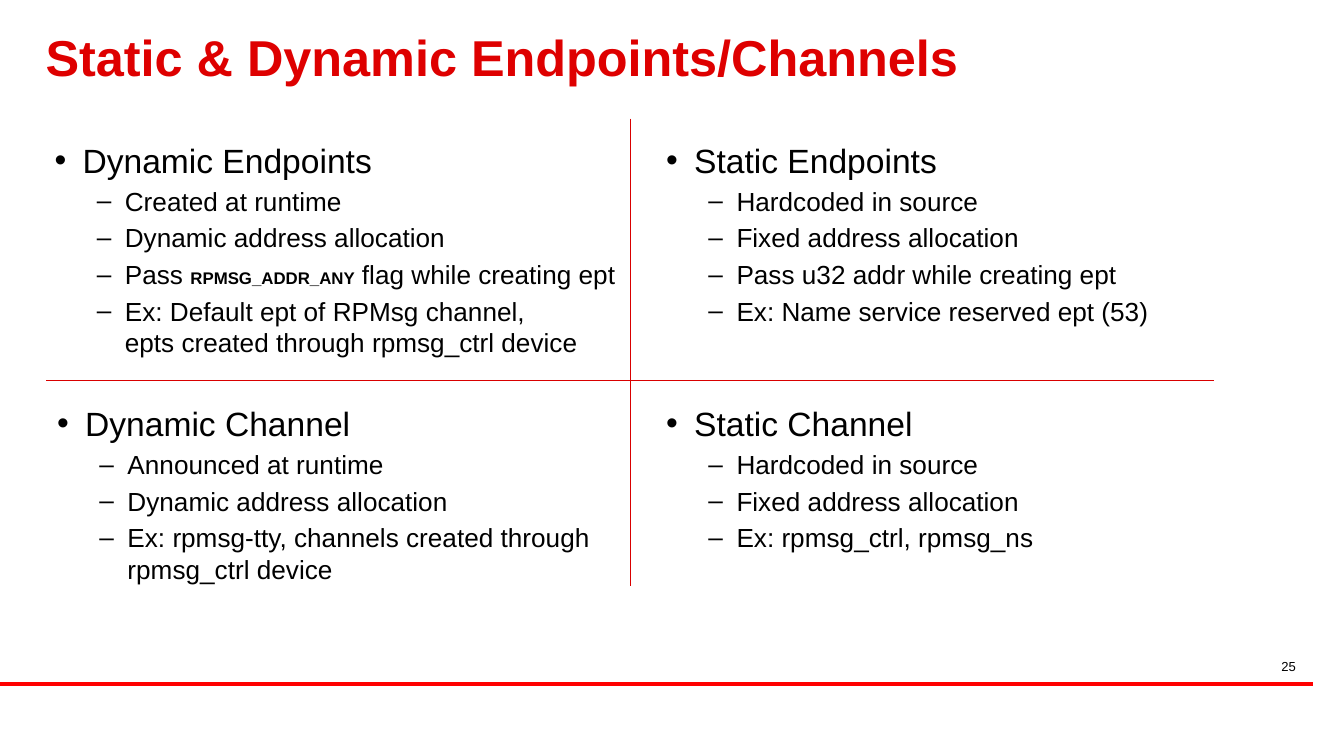
from lxml import etree
from pptx import Presentation
from pptx.dml.color import RGBColor
from pptx.enum.shapes import MSO_CONNECTOR
from pptx.enum.text import MSO_ANCHOR, MSO_AUTO_SIZE, PP_ALIGN
from pptx.oxml.ns import qn
from pptx.util import Cm, Pt

STRAIGHT = MSO_CONNECTOR.STRAIGHT
TOP, MIDDLE = MSO_ANCHOR.TOP, MSO_ANCHOR.MIDDLE
LEFT, RIGHT = PP_ALIGN.LEFT, PP_ALIGN.RIGHT
FIXED_SIZE = MSO_AUTO_SIZE.NONE

# Content: each item is one text, or a list of (text, style) pieces
TITLE = "Static & Dynamic Endpoints/Channels"
PAGE_NUMBER = "25"
QUADRANTS = [
    {"left": 0.81, "top": 2.54, "heading": "Dynamic Endpoints", "items": [
        "Created at runtime",
        "Dynamic address allocation",
        [("Pass ", "item"), ("RPMSG_ADDR_ANY", "flag"),
         (" flag while creating ept", "item")],
        "Ex: Default ept of RPMsg channel,\nepts created through rpmsg_ctrl device",
    ]},
    {"left": 12.37, "top": 2.54, "heading": "Static Endpoints", "items": [
        "Hardcoded in source",
        "Fixed address allocation",
        "Pass u32 addr while creating ept",
        "Ex: Name service reserved ept (53)",
    ]},
    {"left": 0.86, "top": 7.52, "heading": "Dynamic Channel", "items": [
        "Announced at runtime",
        "Dynamic address allocation",
        "Ex: rpmsg-tty, channels created through rpmsg_ctrl device",
    ]},
    {"left": 12.37, "top": 7.52, "heading": "Static Channel", "items": [
        "Hardcoded in source",
        "Fixed address allocation",
        "Ex: rpmsg_ctrl, rpmsg_ns",
    ]},
]
QUADRANT_SIZE = (11.56, 4.19)

# Lines: start x, start y, end x, end y, colour, width in points
LINES = [
    (0, 12.93, 24.82, 12.93, "FF0000", 2.25),
    (11.91, 2.24, 11.91, 11.07, "D90000", 0.75),
    (22.94, 7.19, 0.86, 7.19, "D90000", 0.75),
]

# Formats
STYLES = {
    "title": {"size": Pt(27), "bold": True, "color": "DE0000"},
    "heading": {"size": Pt(18), "bold": False, "color": "000000"},
    "item": {"size": Pt(14), "bold": False, "color": "000000"},
    "flag": {"size": Pt(9), "bold": True, "color": "000000"},
    "number": {"size": Pt(7), "bold": False, "color": "000000"},
}
LISTS = {
    "heading": {"level": 0, "margin": 0.53, "bullet": "•", "before": 0},
    "item": {"level": 1, "margin": 1.33, "bullet": "–", "before": 2.8},
}
HANGING = 0.53


def color(hex_string):
    return RGBColor.from_string(hex_string)


def place(shape, left, top, width, height):
    shape.left, shape.top = Cm(left), Cm(top)
    shape.width, shape.height = Cm(width), Cm(height)


def format_frame(frame, anchor=TOP):
    settings = {
        "word_wrap": True, "auto_size": FIXED_SIZE, "vertical_anchor": anchor,
        "margin_left": Cm(0.22), "margin_right": Cm(0.2),
        "margin_top": Cm(0.1), "margin_bottom": Cm(0.1),
    }
    for name, value in settings.items():
        setattr(frame, name, value)


def add_text(paragraph, text, style):
    values = STYLES[style]
    for number, line in enumerate(text.split("\n")):
        if number:
            paragraph.add_line_break()
        run = paragraph.add_run()
        run.text = line
        run.font.name = "Arial"
        run.font.size = values["size"]
        run.font.bold = values["bold"]
        run.font.color.rgb = color(values["color"])


def format_list(paragraph, kind):
    values = LISTS[kind]
    properties = paragraph._p.get_or_add_pPr()
    properties.set("marL", str(Cm(values["margin"])))
    properties.set("indent", str(-Cm(HANGING)))
    etree.SubElement(properties, qn("a:buFont")).set("typeface", "Arial")
    etree.SubElement(properties, qn("a:buChar")).set("char", values["bullet"])
    paragraph.level = values["level"]
    paragraph.alignment = LEFT
    paragraph.space_before = Pt(values["before"])


def fill_quadrant(shape, quadrant):
    place(shape, quadrant["left"], quadrant["top"], *QUADRANT_SIZE)
    frame = shape.text_frame
    format_frame(frame)
    heading = frame.paragraphs[0]
    format_list(heading, "heading")
    add_text(heading, quadrant["heading"], "heading")
    for item in quadrant["items"]:
        paragraph = frame.add_paragraph()
        format_list(paragraph, "item")
        pieces = [(item, "item")] if isinstance(item, str) else item
        for text, style in pieces:
            add_text(paragraph, text, style)


def add_line(slide, start_x, start_y, end_x, end_y, line_color, width):
    line = slide.shapes.add_connector(
        STRAIGHT, Cm(start_x), Cm(start_y), Cm(end_x), Cm(end_y))
    line.line.color.rgb = color(line_color)
    line.line.width = Pt(width)
    etree.SubElement(line._element.spPr, qn("a:effectLst"))


def add_box(slide):
    return slide.shapes.add_textbox(0, 0, Cm(1), Cm(1))


def main():
    presentation = Presentation()
    presentation.slide_width, presentation.slide_height = Cm(25.4), Cm(14.29)
    slide = presentation.slides.add_slide(presentation.slide_layouts[1])

    # Title
    title = slide.shapes.title
    place(title, 0.64, 0.3, 23.5, 1.7)
    format_frame(title.text_frame, MIDDLE)
    paragraph = title.text_frame.paragraphs[0]
    paragraph.alignment = LEFT
    paragraph.line_spacing = 0.85
    add_text(paragraph, TITLE, "title")

    # Dividers and footer rule
    for line in LINES:
        add_line(slide, *line)

    # Four lists: the first in the body placeholder
    for number, quadrant in enumerate(QUADRANTS):
        shape = add_box(slide) if number else slide.placeholders[1]
        fill_quadrant(shape, quadrant)

    # Page number
    box = add_box(slide)
    place(box, 18.77, 12.34, 5.92, 0.43)
    format_frame(box.text_frame)
    paragraph = box.text_frame.paragraphs[0]
    paragraph.alignment = RIGHT
    add_text(paragraph, PAGE_NUMBER, "number")

    presentation.save("out.pptx")


if __name__ == "__main__":
    main()
